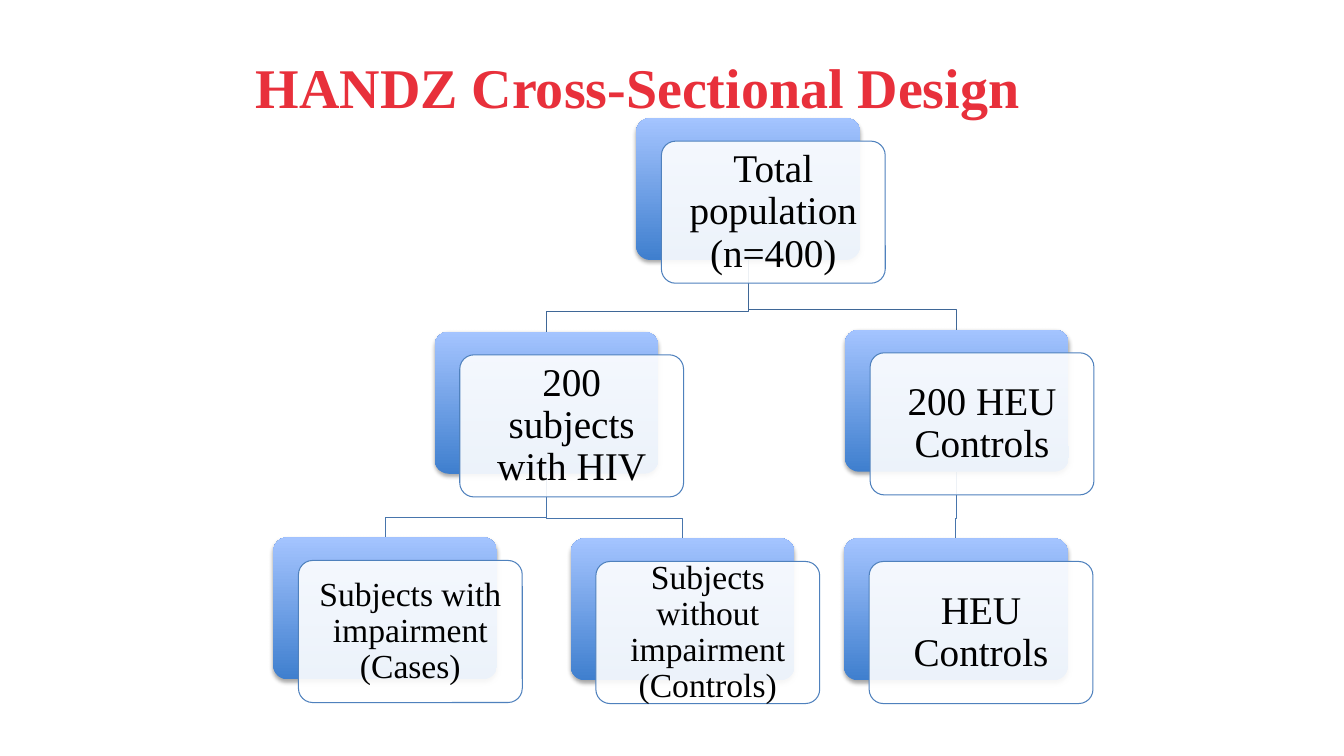
from dataclasses import dataclass

from lxml.etree import SubElement
from pptx import Presentation
from pptx.dml.color import RGBColor
from pptx.enum.shapes import MSO_SHAPE as Shape
from pptx.enum.text import MSO_ANCHOR as Anchor, PP_ALIGN as Align
from pptx.oxml.ns import qn
from pptx.util import Emu, Pt


@dataclass(frozen=True)
class Theme:
    """Colours, font and type sizes of the slide."""
    font: str = "Times New Roman"
    title: str = "E8303B"
    text: str = "000000"
    card: str = "FFFFFF"
    card_line: str = "4F81BD"
    back_low: str = "3F7FCE"
    back_high: str = "A4C4FF"
    upper_link: str = "3F6797"
    lower_link: str = "4875AC"
    title_size: int = 40
    large: int = 28
    small: int = 24


THEME = Theme()
EMU_PER_PX = 9144
BOX_WIDTH, BOX_HEIGHT = 222, 141
CARD_SHIFT_X, CARD_SHIFT_Y = 25, 23
BEND_ABOVE_CHILD = 20

BOXES = {
    "total": (631, 117, "Total population (n=400)", THEME.large),
    "hiv": (431, 329, "200 subjects with HIV", THEME.large),
    "cases": (271, 533, "Subjects with impairment (Cases)", THEME.small),
    "controls": (566, 534, "Subjects without impairment (Controls)", THEME.small),
    "heu": (838, 327, "200 HEU Controls", THEME.large),
    "heu_controls": (837, 534, "HEU Controls", THEME.large),
}
LINKS = [
    ("heu", "heu_controls", THEME.lower_link),
    ("total", "heu", THEME.upper_link),
    ("hiv", "controls", THEME.lower_link),
    ("hiv", "cases", THEME.lower_link),
    ("total", "hiv", THEME.upper_link),
]


def px(value):
    """Turn px into EMU."""
    return Emu(value * EMU_PER_PX)


def rgb(value):
    """Turn a hex string into a colour."""
    return RGBColor.from_string(value)


def style_line(shape, color):
    """Give a shape a thin line."""
    shape.line.color.rgb = rgb(color)
    shape.line.width = Pt(0.75)


def style_text(text_frame, size, color, bold=False):
    """Centre the text and format its runs."""
    text_frame.word_wrap = True
    text_frame.vertical_anchor = Anchor.MIDDLE
    for paragraph in text_frame.paragraphs:
        paragraph.alignment = Align.CENTER
        for run in paragraph.runs:
            run.font.name = THEME.font
            run.font.size = Pt(size)
            run.font.bold = bold
            run.font.color.rgb = rgb(color)


def add_title(slide, text):
    """Place the slide title."""
    title = slide.shapes.title
    title.left, title.top, title.width, title.height = map(px, (58, 12, 1149, 146))
    title.text_frame.text = text
    style_text(title.text_frame, THEME.title_size, THEME.title, bold=True)


def add_link(slide, parent, child, color):
    """Draw a bent line from a parent box to a child box."""
    start_x, end_x = (BOXES[name][0] + BOX_WIDTH // 2 for name in (parent, child))
    start_y, end_y = BOXES[parent][1] + BOX_HEIGHT, BOXES[child][1]
    bend_y = end_y - BEND_ABOVE_CHILD
    builder = slide.shapes.build_freeform(start_x, start_y, scale=EMU_PER_PX)
    builder.add_line_segments(
        [(start_x, bend_y), (end_x, bend_y), (end_x, end_y)], close=False)
    link = builder.convert_to_shape()
    link.shadow.inherit = False
    link.fill.background()
    style_line(link, color)


def add_rounded(slide, left, top):
    """Add a rounded box without shadow."""
    shape = slide.shapes.add_shape(
        Shape.ROUNDED_RECTANGLE, px(left), px(top), px(BOX_WIDTH), px(BOX_HEIGHT))
    shape.adjustments[0] = 0.1
    shape.shadow.inherit = False
    return shape


def add_shadow(shape):
    """Give a shape a soft shadow below it."""
    effects = shape._element.spPr.find(qn("a:effectLst"))
    shadow = SubElement(effects, qn("a:outerShdw"), blurRad=str(Pt(3.1)),
                        dist=str(Pt(1.8)), dir="5400000", rotWithShape="0")
    color = SubElement(shadow, qn("a:srgbClr"), val="000000")
    SubElement(color, qn("a:alpha"), val="35000")


def add_back(slide, left, top):
    """Add the blue box behind a card."""
    back = add_rounded(slide, left, top)
    back.fill.gradient()
    back.fill.gradient_angle = 90
    for stop, color in zip(back.fill.gradient_stops, (THEME.back_low, THEME.back_high)):
        stop.color.rgb = rgb(color)
    back.line.fill.background()
    add_shadow(back)


def add_card(slide, left, top, text, size):
    """Add the translucent card that carries the text."""
    card = add_rounded(slide, left, top)
    card.fill.solid()
    card.fill.fore_color.rgb = rgb(THEME.card)
    fill_color = card._element.spPr.find(qn("a:solidFill")).find(qn("a:srgbClr"))
    SubElement(fill_color, qn("a:alpha"), val="90000")
    style_line(card, THEME.card_line)
    frame = card.text_frame
    inset = px(12 if size == THEME.large else 10)
    frame.margin_left = frame.margin_right = inset
    frame.margin_top = frame.margin_bottom = inset
    frame.text = text
    frame.paragraphs[0].line_spacing = 0.9
    style_text(frame, size, THEME.text)


def main():
    """Build the slide and save it."""
    presentation = Presentation()
    presentation.slide_width, presentation.slide_height = px(1333), px(750)
    slide = presentation.slides.add_slide(presentation.slide_layouts[5])
    add_title(slide, "HANDZ Cross-Sectional Design")
    for parent, child, color in LINKS:
        add_link(slide, parent, child, color)
    for left, top, text, size in BOXES.values():
        add_back(slide, left, top)
        add_card(slide, left + CARD_SHIFT_X, top + CARD_SHIFT_Y, text, size)
    presentation.save("out.pptx")


if __name__ == "__main__":
    main()
